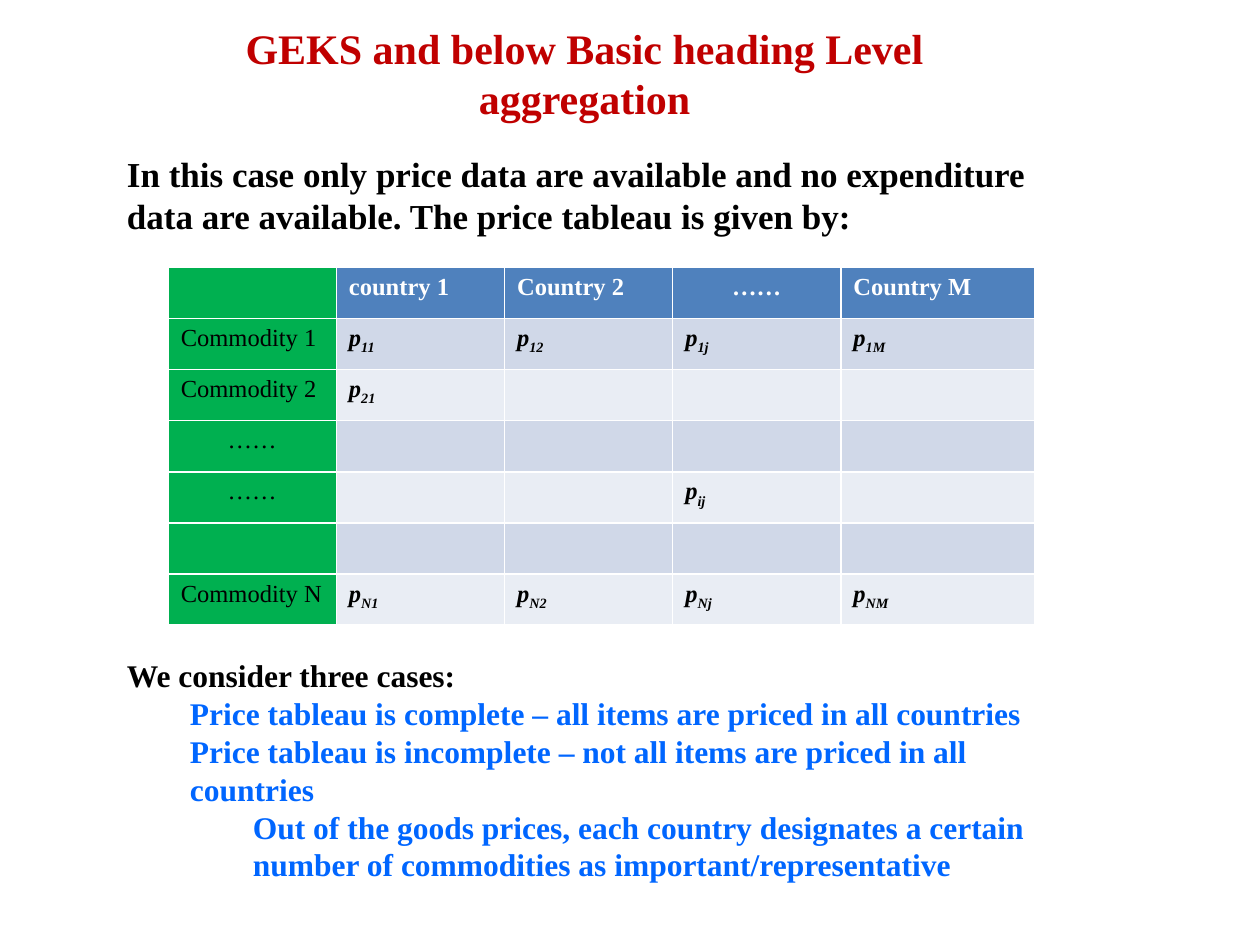
import pptx
import pptx.dml.color
import pptx.enum.text
import pptx.util

Cm = pptx.util.Cm
RGBColor = pptx.dml.color.RGBColor
CENTER = pptx.enum.text.PP_ALIGN.CENTER

RED = RGBColor(0xC0, 0x00, 0x00)
BLACK = RGBColor(0x00, 0x00, 0x00)
WHITE = RGBColor(0xFF, 0xFF, 0xFF)
BLUE = RGBColor(0x00, 0x66, 0xFF)
GREEN = RGBColor(0x00, 0xB0, 0x50)
HEADER = RGBColor(0x4F, 0x81, 0xBD)
BANDS = (RGBColor(0xE9, 0xED, 0xF4), RGBColor(0xD0, 0xD8, 0xE8))

FONT = "Times New Roman"
DOTS = "……"
INDENT = 1.27
ROW_HEIGHT = 1.03
COUNTRIES = ["country 1", "Country 2", DOTS, "Country M"]
PRICES = [
    ("Commodity 1", ["11", "12", "1j", "1M"]),
    ("Commodity 2", ["21", "", "", ""]),
    (DOTS, [""] * 4),
    (DOTS, ["", "", "ij", ""]),
    ("", [""] * 4),
    ("Commodity N", ["N1", "N2", "Nj", "NM"]),
]
CASES = [
    (0, "We consider three cases:"),
    (1, "Price tableau is complete – all items are priced in all countries"),
    (1, "Price tableau is incomplete – not all items are priced in all countries"),
    (2, "Out of the goods prices, each country designates a certain number of "
        "commodities as important/representative"),
]


def add_text(p, text, size=14, color=BLACK, bold=True, italic=False, base=0, align=None):
    """Append a formatted run to a paragraph."""
    r = p.add_run()
    r.text = text
    r.font.name = FONT
    r.font.size = pptx.util.Pt(size)
    r.font.color.rgb = color
    r.font.bold = bold
    r.font.italic = italic
    if base:
        r.font._element.set("baseline", str(base * 1000))
    if align is not None:
        p.alignment = align


def add_box(s, left, top, width, height):
    """Add a wrapping text box and return its text frame."""
    tf = s.shapes.add_textbox(Cm(left), Cm(top), Cm(width), Cm(height)).text_frame
    tf.word_wrap = True
    return tf


def add_title(s, left, top, width, height):
    """Place the slide title."""
    p = add_box(s, left, top, width, height).paragraphs[0]
    add_text(p, "GEKS and below Basic heading Level aggregation",
             size=24, color=RED, align=CENTER)


def add_intro(s, left, top, width, height):
    """Place the sentence that introduces the price tableau."""
    p = add_box(s, left, top, width, height).paragraphs[0]
    add_text(p, "In this case only price data are available and no expenditure data "
                "are available. The price tableau is given by:", size=20)


def add_tableau(s, left, top, width, column):
    """Place the price table, whose last column takes the remaining width."""
    rows, cols = len(PRICES) + 1, len(COUNTRIES) + 1
    table = s.shapes.add_table(rows, cols, Cm(left), Cm(top), Cm(width),
                               Cm(rows * ROW_HEIGHT)).table
    for j in range(cols):
        table.columns[j].width = Cm(column if j < cols - 1 else width - column * (cols - 1))
    for i, (label, values) in enumerate([("", COUNTRIES)] + PRICES):
        table.rows[i].height = Cm(ROW_HEIGHT)
        for j, text in enumerate([label] + values):
            cell = table.cell(i, j)
            cell.fill.solid()
            cell.fill.fore_color.rgb = GREEN if j == 0 else BANDS[i % 2] if i else HEADER
            p = cell.text_frame.paragraphs[0]
            if not text:
                continue
            if i and j:
                add_text(p, "p", italic=True)
                add_text(p, text, italic=True, base=-25)
            else:
                add_text(p, text, color=BLACK if i else WHITE, bold=i == 0,
                         align=CENTER if text == DOTS else None)


def add_cases(s, left, top, width, height):
    """Place the indented list of cases."""
    tf = add_box(s, left, top, width, height)
    for i, (level, text) in enumerate(CASES):
        p = tf.add_paragraph() if i else tf.paragraphs[0]
        p.level = level
        pPr = p._p.get_or_add_pPr()
        pPr.set("marL", str(Cm(level * INDENT)))
        pPr.set("indent", "0")
        add_text(p, text, size=18, color=BLUE if level else BLACK)


def main():
    """Build the slide and save it."""
    prs = pptx.Presentation()
    prs.slide_width, prs.slide_height = Cm(25.4), Cm(19.05)
    s = prs.slides.add_slide(prs.slide_layouts[6])
    add_title(s, 2.49, 0.33, 18.59, 2.31)
    add_intro(s, 2.31, 2.95, 19.61, 1.96)
    add_cases(s, 2.31, 13.11, 19.61, 4.97)
    add_tableau(s, 3.39, 5.39, 17.46, 3.39)
    prs.save("out.pptx")


if __name__ == "__main__":
    main()
